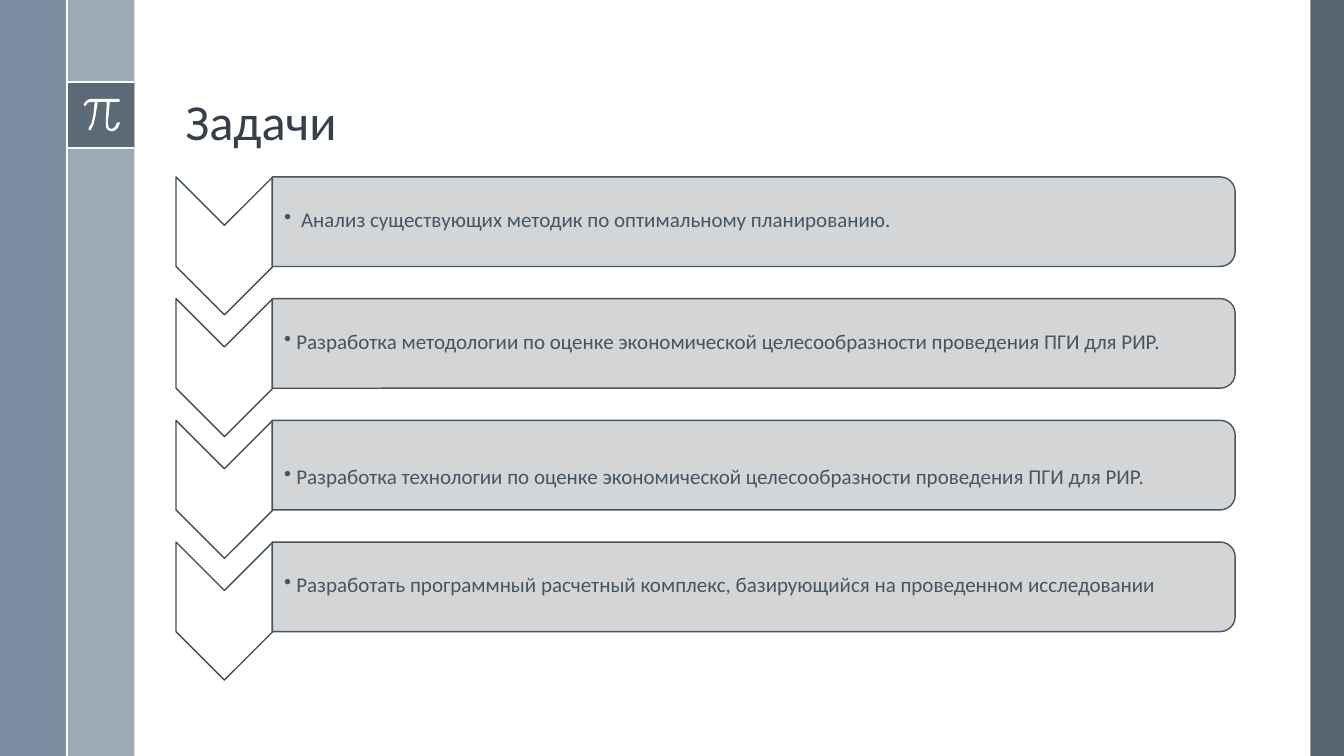
from dataclasses import dataclass
from typing import Optional

from lxml import etree
from pptx import Presentation
from pptx.dml.color import RGBColor
from pptx.enum.shapes import MSO_CONNECTOR, MSO_SHAPE
from pptx.enum.text import MSO_ANCHOR, MSO_AUTO_SIZE, PP_ALIGN
from pptx.oxml.ns import qn
from pptx.util import Emu, Inches, Pt

RECTANGLE = MSO_SHAPE.RECTANGLE
CHEVRON = MSO_SHAPE.CHEVRON
ROUNDED_BAR = MSO_SHAPE.ROUND_2_SAME_RECTANGLE
STRAIGHT = MSO_CONNECTOR.STRAIGHT
MIDDLE = MSO_ANCHOR.MIDDLE
BOTTOM = MSO_ANCHOR.BOTTOM
LEFT = PP_ALIGN.LEFT
NO_AUTOFIT = MSO_AUTO_SIZE.NONE

WHITE = RGBColor(0xFF, 0xFF, 0xFF)
SLATE = RGBColor(0x47, 0x55, 0x62)
STEEL = RGBColor(0x6A, 0x80, 0x93)
MIST = RGBColor(0x9B, 0xAA, 0xB7)
TITLE_INK = RGBColor(0x35, 0x40, 0x4A)
CHEVRON_EDGE = RGBColor(0x40, 0x4D, 0x59)
BAR_GRAY = RGBColor(0xCF, 0xD1, 0xD3)
BODY_INK = RGBColor(0x46, 0x55, 0x62)

FONT = "Calibri"
SLIDE_WIDTH = Inches(13.33)
SLIDE_HEIGHT = Inches(7.5)
GRID = 20
TASK_PITCH = 3.22


@dataclass(frozen=True)
class Frame:
    column: float
    row: float
    columns: float
    rows: float

    def moved_down(self, rows: float) -> "Frame":
        return Frame(self.column, self.row + rows, self.columns, self.rows)

    def box(self) -> tuple[Emu, Emu, Emu, Emu]:
        return across(self.column), down(self.row), across(self.columns), down(self.rows)

    def quarter_turned_box(self) -> tuple[Emu, Emu, Emu, Emu]:
        left, top, width, height = self.box()
        shift = (width - height) // 2
        return Emu(left + shift), Emu(top - shift), height, width


@dataclass(frozen=True)
class Panel:
    frame: Frame
    color: RGBColor
    opacity: int = 100


@dataclass(frozen=True)
class Rule:
    start: tuple[float, float]
    end: tuple[float, float]


@dataclass(frozen=True)
class Task:
    text: str
    text_drop: float = 0


PANELS = [
    Panel(Frame(19.5, 0, 0.5, 20), SLATE, 90),
    Panel(Frame(1, 0, 1, 20), MIST),
    Panel(Frame(0, 0, 1, 20), STEEL, 88),
    Panel(Frame(1, 2.16, 1, 1.77), SLATE, 75),
]
RULES = [
    Rule((1, 2.16), (2, 2.16)),
    Rule((1, 3.92), (2, 3.92)),
    Rule((1, 0), (1, 20)),
]
TASKS = [
    Task(" Анализ существующих методик по оптимальному планированию."),
    Task("Разработка методологии по оценке экономической целесообразности проведения ПГИ для РИР."),
    Task("Разработка технологии по оценке экономической целесообразности проведения ПГИ для РИР.", 0.36),
    Task("Разработать программный расчетный комплекс, базирующийся на проведенном исследовании"),
]
TITLE_FRAME = Frame(2.61, 0.51, 16.05, 3.63)
CHEVRON_FRAME = Frame(2.62, 4.68, 1.44, 3.65)
BAR_FRAME = Frame(4.05, 4.68, 14.33, 2.37)
TEXT_FRAME = Frame(4.05, 4.77, 14.27, 2.13)

PI_OUTLINE = [
    (118, 98), (90, 98), (87, 99), (84, 102), (83, 104), (84, 105), (85, 105),
    (87, 102), (90, 101), (94, 101), (93, 112), (91, 122), (88, 127), (88, 129),
    (90, 129), (93, 123), (95, 114), (97, 101), (106, 101), (105, 122),
    (105, 126), (107, 129), (110, 130), (113, 130), (117, 127), (119, 122),
    (118, 121), (116, 122), (114, 126), (111, 128), (108, 127), (107, 122),
    (109, 101), (118, 101), (119, 100),
]


def across(columns: float) -> Emu:
    return Emu(round(SLIDE_WIDTH * columns / GRID))


def down(rows: float) -> Emu:
    return Emu(round(SLIDE_HEIGHT * rows / GRID))


def paint(shape, color: RGBColor, opacity: int = 100, edge: Optional[RGBColor] = None) -> None:
    shape.shadow.inherit = False
    shape.fill.solid()
    shape.fill.fore_color.rgb = color
    if opacity < 100:
        color_node = shape._element.spPr.find(qn("a:solidFill")).find(qn("a:srgbClr"))
        etree.SubElement(color_node, qn("a:alpha"), val=str(opacity * 1000))
    if edge is None:
        shape.line.fill.background()
    else:
        shape.line.color.rgb = edge
        shape.line.width = Pt(1)


def format_paragraph(paragraph, size: float, color: RGBColor) -> None:
    paragraph.alignment = LEFT
    paragraph.line_spacing = 0.9
    for run in paragraph.runs:
        run.font.name = FONT
        run.font.size = Pt(size)
        run.font.color.rgb = color


def add_panel(slide, panel: Panel) -> None:
    shape = slide.shapes.add_shape(RECTANGLE, *panel.frame.box())
    paint(shape, panel.color, panel.opacity)


def add_rule(slide, rule: Rule) -> None:
    (start_column, start_row), (end_column, end_row) = rule.start, rule.end
    connector = slide.shapes.add_connector(
        STRAIGHT, across(start_column), down(start_row), across(end_column), down(end_row)
    )
    connector.line.color.rgb = WHITE
    connector.line.width = Pt(1.5)
    etree.SubElement(connector._element.spPr, qn("a:effectLst"))


def add_pi_sign(slide) -> None:
    builder = slide.shapes.build_freeform(*PI_OUTLINE[0], scale=Inches(0.01))
    builder.add_line_segments(PI_OUTLINE[1:], close=True)
    paint(builder.convert_to_shape(), WHITE)


def add_title(slide, text: str) -> None:
    title = slide.shapes.title
    title.left, title.top, title.width, title.height = TITLE_FRAME.box()
    title.text_frame.text = text
    title.text_frame.auto_size = NO_AUTOFIT
    title.text_frame.vertical_anchor = BOTTOM
    format_paragraph(title.text_frame.paragraphs[0], 36, TITLE_INK)


def add_turned_shape(slide, kind: MSO_SHAPE, frame: Frame):
    shape = slide.shapes.add_shape(kind, *frame.quarter_turned_box())
    shape.rotation = 90
    return shape


def add_task(slide, task: Task, offset: float) -> None:
    chevron = add_turned_shape(slide, CHEVRON, CHEVRON_FRAME.moved_down(offset))
    paint(chevron, WHITE, edge=CHEVRON_EDGE)
    bar = add_turned_shape(slide, ROUNDED_BAR, BAR_FRAME.moved_down(offset))
    paint(bar, BAR_GRAY, 90, BODY_INK)

    text_box = slide.shapes.add_textbox(*TEXT_FRAME.moved_down(offset + task.text_drop).box())
    text_frame = text_box.text_frame
    text_frame.word_wrap = True
    text_frame.vertical_anchor = MIDDLE
    text_frame.margin_left = Inches(0.12)
    text_frame.margin_top = text_frame.margin_right = text_frame.margin_bottom = Inches(0.01)
    text_frame.text = task.text
    paragraph = text_frame.paragraphs[0]
    format_paragraph(paragraph, 15, BODY_INK)
    properties = paragraph._p.get_or_add_pPr()
    properties.set("marL", str(Inches(0.12)))
    properties.set("indent", str(-Inches(0.12)))
    etree.SubElement(properties, qn("a:buChar"), char="•")


def main() -> None:
    presentation = Presentation()
    presentation.slide_width = SLIDE_WIDTH
    presentation.slide_height = SLIDE_HEIGHT
    slide = presentation.slides.add_slide(presentation.slide_layouts.get_by_name("Title Only"))
    for panel in PANELS:
        add_panel(slide, panel)
    for rule in RULES:
        add_rule(slide, rule)
    add_pi_sign(slide)
    add_title(slide, "Задачи")
    for index, task in enumerate(TASKS):
        add_task(slide, task, index * TASK_PITCH)
    presentation.save("out.pptx")


if __name__ == "__main__":
    main()
